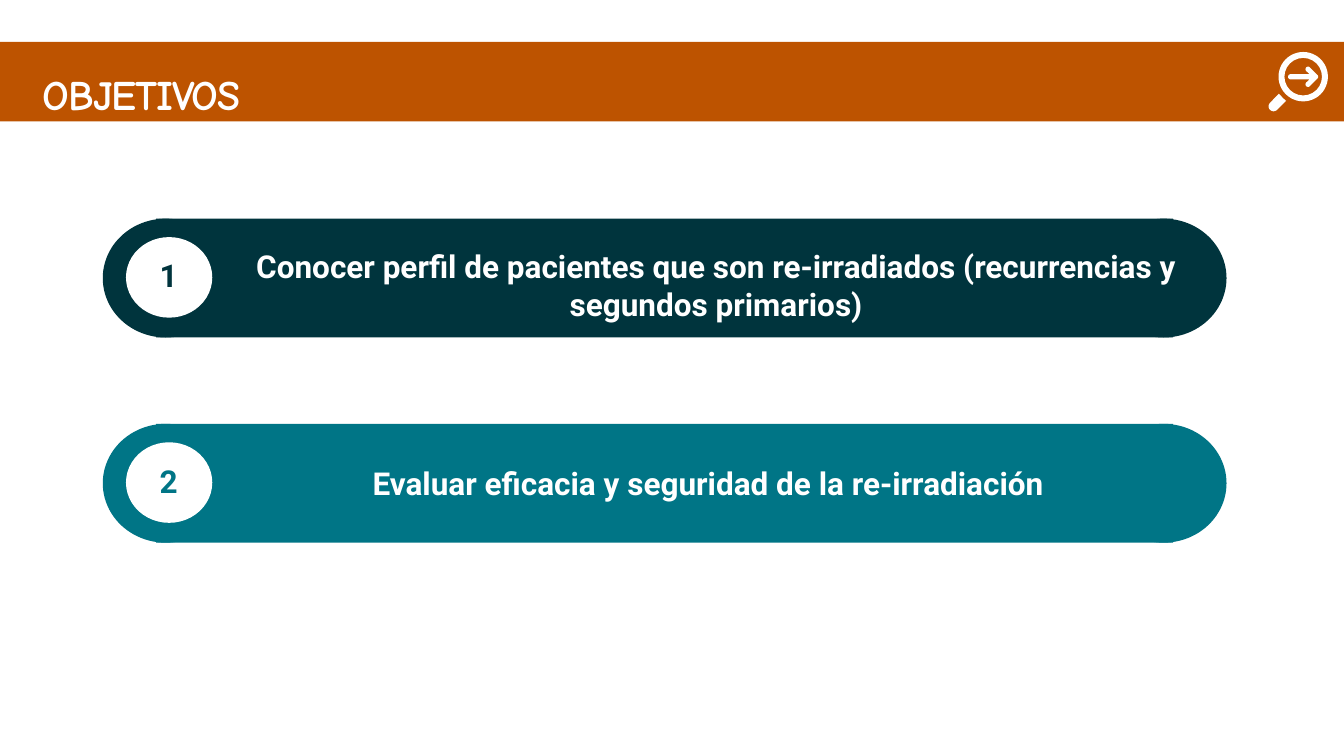
from math import cos, radians, sin

from pptx import Presentation
from pptx.dml.color import RGBColor
from pptx.enum.shapes import MSO_SHAPE as Preset
from pptx.enum.text import MSO_ANCHOR as Anchor, PP_ALIGN as Align
from pptx.util import Cm, Pt

COLORS = {"orange": "BD5300", "dark": "00343D", "teal": "007586", "white": "FFFFFF"}


def style_shape(shape, color):
    shape.shadow.inherit = False
    shape.fill.solid()
    shape.fill.fore_color.rgb = RGBColor.from_string(COLORS[color])
    shape.line.fill.background()


def write_text(shape, text, color, font_name, size, align):
    shape.text_frame.word_wrap = True
    paragraph = shape.text_frame.paragraphs[0]
    paragraph.alignment = align
    run = paragraph.add_run()
    run.text = text
    formats = {"name": font_name, "size": Pt(size), "bold": True}
    for name, value in formats.items():
        setattr(run.font, name, value)
    run.font.color.rgb = RGBColor.from_string(COLORS[color])
    return paragraph


presentation = Presentation()
presentation.slide_width, presentation.slide_height = Cm(67.74), Cm(38.1)
slide = presentation.slides.add_slide(presentation.slide_layouts[6])
shapes = slide.shapes

# Title band
band = shapes.add_shape(Preset.RECTANGLE, 0, Cm(2.11), Cm(67.74), Cm(4.01))
style_shape(band, "orange")
title = write_text(band, "OBJETIVOS", "white", "Comic Neue", 60, Align.LEFT)
title.line_spacing = 0.8
title.runs[0].font._element.set("spc", "-160")
frame_formats = {
    "vertical_anchor": Anchor.BOTTOM,
    "margin_left": Cm(2.16),
    "margin_right": Cm(0.15),
    "margin_top": Cm(0.15),
    "margin_bottom": Cm(0.15),
}
for name, value in frame_formats.items():
    setattr(band.text_frame, name, value)

# Numbered objectives: top, colour, text, then left, offset and height of the text
objectives = [
    (11.02, "dark",
     "Conocer perfil de pacientes que son re-irradiados (recurrencias y segundos primarios)",
     11.53, 1.3, 4.11),
    (21.36, "teal", "Evaluar eficacia y seguridad de la re-irradiación", 11.13, 1.88, 2.18),
]
for number, (top, color, text, text_left, offset, text_height) in enumerate(objectives, 1):
    pill_parts = [
        (Preset.RECTANGLE, 7.87, 0, 51.26, 5.99, color),
        (Preset.OVAL, 5.18, 0, 6.35, 5.99, color),
        (Preset.OVAL, 55.47, 0, 6.35, 5.99, color),
        (Preset.OVAL, 6.35, 0.93, 4.35, 4.06, "white"),
    ]
    for preset, left, drop, width, height, fill in pill_parts:
        part = shapes.add_shape(preset, Cm(left), Cm(top + drop), Cm(width), Cm(height))
        style_shape(part, fill)

    labels = [
        (text, text_left, offset, 49.12, text_height, "white"),
        (str(number), 7.5, 1.78, 2, 2.18, color),
    ]
    for label, left, drop, width, height, font_color in labels:
        box = shapes.add_textbox(Cm(left), Cm(top + drop), Cm(width), Cm(height))
        write_text(box, label, font_color, "Roboto", 45, Align.CENTER)

# Magnifier lens
lens = shapes.add_shape(Preset.DONUT, Cm(64.44), Cm(2.62), Cm(2.49), Cm(2.49))
lens.adjustments[0] = 0.12
style_shape(lens, "white")

# Handle and arrow: corners are (x, y), round ends are (x, y, radius, start, end)
outlines = [
    [(64.46, 4.72), (64.19, 5.36, 0.25, 225, 45), (64.82, 5.08), (64.67, 4.95)],
    [(66.31, 3.87, 0.13, 45, -45), (65.93, 3.49, 0.13, -45, -225), (66.01, 3.74),
     (65.05, 3.87, 0.13, -90, -270), (66.01, 4), (65.93, 4.25, 0.13, 225, 45)],
]
STEPS = 12
for outline in outlines:
    points = []
    for x, y, *arc in outline:
        if not arc:
            points.append((Cm(x), Cm(y)))
            continue
        radius, start, end = arc
        for step in range(STEPS + 1):
            angle = radians(start + (end - start) * step / STEPS)
            points.append((Cm(x + radius * cos(angle)), Cm(y + radius * sin(angle))))
    builder = shapes.build_freeform(*points[0])
    builder.add_line_segments(points[1:], close=True)
    style_shape(builder.convert_to_shape(), "white")

presentation.save("out.pptx")
